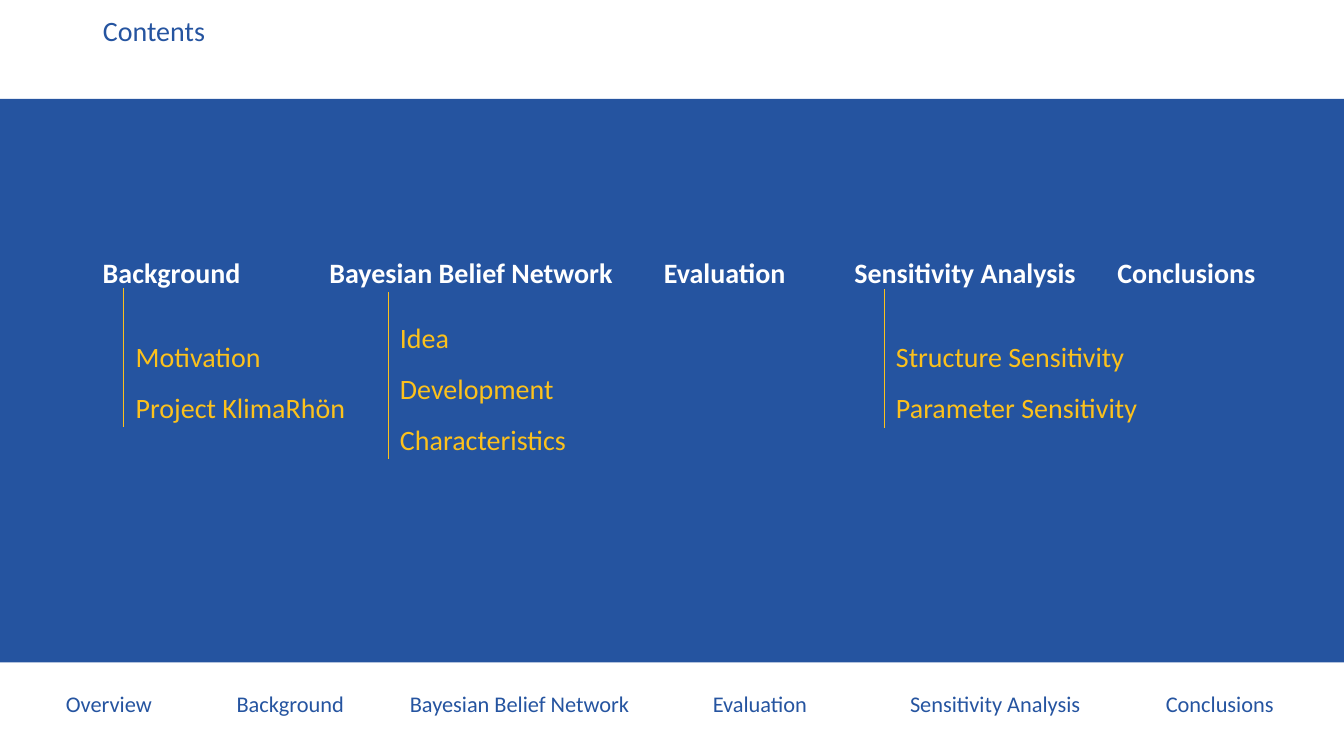
from dataclasses import dataclass

from lxml import etree
from pptx import Presentation
from pptx.dml.color import RGBColor
from pptx.enum.shapes import MSO_CONNECTOR, MSO_SHAPE
from pptx.enum.text import MSO_ANCHOR, MSO_AUTO_SIZE, PP_ALIGN
from pptx.oxml.ns import qn
from pptx.util import Cm, Pt

STRAIGHT = MSO_CONNECTOR.STRAIGHT
RECT = MSO_SHAPE.RECTANGLE
TOP = MSO_ANCHOR.TOP
GROW = MSO_AUTO_SIZE.SHAPE_TO_FIT_TEXT
FIXED = MSO_AUTO_SIZE.NONE
LEFT, CENTER = PP_ALIGN.LEFT, PP_ALIGN.CENTER


@dataclass(frozen=True)
class Theme:
    """Colours, font and type sizes of the slide."""
    blue: RGBColor = RGBColor(0x25, 0x54, 0xA0)
    gold: RGBColor = RGBColor(0xFC, 0xC1, 0x1C)
    white: RGBColor = RGBColor(0xFF, 0xFF, 0xFF)
    font: str = "Calibri"
    main: Pt = Pt(20)
    small: Pt = Pt(16)
    rule: Pt = Pt(0.5)


THEME = Theme()
WIDE, HIGH = 33.87, 19.05
PITCH = 1.28
ROW = 1.12

TOPICS = [
    ("Background", 2.34, 4.27, 0.78, 0.94, 2.11,
     [("Motivation", 4.27), ("Project KlimaRhön", 5.87)]),
    ("Bayesian Belief Network", 8.05, 7.75, 1.73, 1.05, 1.63,
     [("Idea", 4.27), ("Development", 5.87), ("Characteristics", 5.87)]),
    ("Evaluation", 16.48, 3.96, 0, 0, 0, []),
    ("Sensitivity Analysis", 21.28, 6.22, 1, 0.97, 2.12,
     [("Structure Sensitivity", 6.3), ("Parameter Sensitivity", 6.86)]),
    ("Conclusions", 27.91, 4.32, 0, 0, 0, []),
]
LINKS = [
    ("Overview", 0.61, 4.27),
    ("Background", 5.18, 4.27),
    ("Bayesian Belief Network", 9.78, 6.63),
    ("Evaluation", 17.17, 3.96),
    ("Sensitivity Analysis", 21.97, 6.22),
    ("Conclusions", 28.58, 4.32),
]


def style(par, size, color, bold=False, align=LEFT):
    """Set the font and alignment of a paragraph."""
    par.alignment = align
    font = par.font
    font.name, font.size, font.bold = THEME.font, size, bold
    font.color.rgb = color


def label(slide, box, text, size, color, bold=False, align=LEFT):
    """Add one line of text in a box."""
    frame = slide.shapes.add_textbox(*map(Cm, box)).text_frame
    frame.word_wrap = True
    frame.auto_size = GROW
    frame.text = text
    style(frame.paragraphs[0], size, color, bold, align)


def rule(slide, x, top, end):
    """Add a thin upright line."""
    line = slide.shapes.add_connector(STRAIGHT, Cm(x), Cm(top), Cm(x), Cm(end))
    line.line.color.rgb = THEME.gold
    line.line.width = THEME.rule
    etree.SubElement(line._element.spPr, qn("a:effectLst"))


def band(slide, box):
    """Add the blue field behind the topics."""
    field = slide.shapes.add_shape(RECT, *map(Cm, box))
    field.shadow.inherit = False
    field.fill.solid()
    field.fill.fore_color.rgb = THEME.blue
    field.line.fill.background()


def header(slide, box, text):
    """Place and format the title."""
    title = slide.shapes.title
    title.left, title.top, title.width, title.height = map(Cm, box)
    frame = title.text_frame
    frame.text = text
    frame.word_wrap = True
    frame.auto_size = FIXED
    frame.vertical_anchor = TOP
    par = frame.paragraphs[0]
    par.line_spacing = 0.9
    style(par, THEME.main, THEME.blue)


def topic(slide, box, head, shift, start, first, items):
    """Add a heading with its ruled list below."""
    left, top = box[:2]
    label(slide, box, head, THEME.main, THEME.white, bold=True)
    x = left + shift
    for row, (text, width) in enumerate(items):
        spot = (x + 0.05, top + first + row * PITCH, width, ROW)
        label(slide, spot, text, THEME.main, THEME.gold)
    if items:
        end = top + first + (len(items) - 1) * PITCH + ROW - 0.06
        rule(slide, x, top + start, end)


def footer(slide, top, height):
    """Add the row of section names."""
    for text, left, width in LINKS:
        label(slide, (left, top, width, height), text,
              THEME.small, THEME.blue, align=CENTER)


def main():
    """Build and save the slide."""
    deck = Presentation()
    deck.slide_width, deck.slide_height = Cm(WIDE), Cm(HIGH)
    slide = deck.slides.add_slide(deck.slide_layouts[5])
    band(slide, (0, 2.49, WIDE, 14.2))
    header(slide, (2.34, 0.3, 24.13, 2.9), "Contents")
    for head, left, width, *rest in TOPICS:
        topic(slide, (left, 6.32, width, ROW), head, *rest)
    footer(slide, 17.27, 0.94)
    deck.save("out.pptx")


if __name__ == "__main__":
    main()
